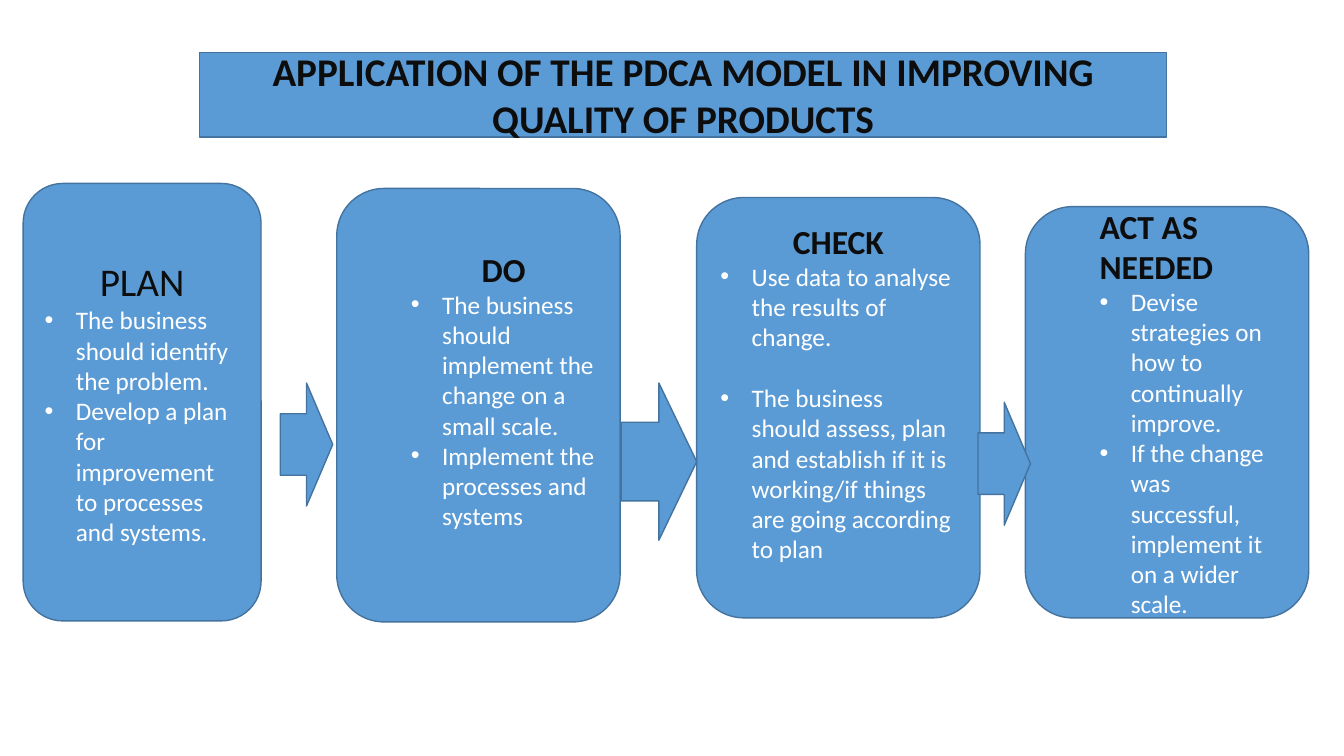
import pptx
import pptx.dml.color
import pptx.enum.shapes
import pptx.enum.text
import pptx.oxml.ns
import pptx.util
from lxml import etree

Inches = pptx.util.Inches
Pt = pptx.util.Pt
SHAPE = pptx.enum.shapes.MSO_SHAPE
ALIGN = pptx.enum.text.PP_ALIGN
LINE_18 = 22  # height in points of one line of 18 pt text


def color(hex_value):
    return pptx.dml.color.RGBColor.from_string(hex_value)


class CycleSlide:
    FONT = "Calibri"
    FILL = "5B9BD5"
    OUTLINE = "43739E"
    DARK = "0D0D0D"
    LIGHT = "FFFFFF"
    HANGING = 0.31

    def __init__(self, presentation):
        self.slide = presentation.slides.add_slide(presentation.slide_layouts[6])

    def block(self, kind, left, top, width, height):
        """Add a filled, outlined preset shape."""
        shape = self.slide.shapes.add_shape(
            kind, Inches(left), Inches(top), Inches(width), Inches(height))
        shape.shadow.inherit = False
        shape.fill.solid()
        shape.fill.fore_color.rgb = color(self.FILL)
        shape.line.color.rgb = color(self.OUTLINE)
        shape.line.width = Pt(1)
        shape.text_frame.word_wrap = True
        shape.text_frame.vertical_anchor = pptx.enum.text.MSO_ANCHOR.MIDDLE
        return shape

    def set_text(self, paragraph, text, size, hex_value, bold=False, align=ALIGN.LEFT):
        paragraph.text = text
        paragraph.alignment = align
        for run in paragraph.runs:
            run.font.name = self.FONT
            run.font.size = Pt(size)
            run.font.bold = bold
            run.font.color.rgb = color(hex_value)

    def indent(self, paragraph, margin, first_line=0):
        properties = paragraph._p.get_or_add_pPr()
        properties.set("marL", str(Inches(margin)))
        properties.set("indent", str(Inches(first_line)))
        return properties

    def bullet(self, paragraph, text, margin):
        properties = self.indent(paragraph, margin + self.HANGING, -self.HANGING)
        for tag, attribute, value in (("a:buFont", "typeface", "Arial"),
                                      ("a:buChar", "char", "•")):
            element = etree.SubElement(properties, pptx.oxml.ns.qn(tag))
            element.set(attribute, value)
        self.set_text(paragraph, text, 18, self.LIGHT)

    def title(self, text, *box):
        shape = self.block(SHAPE.RECTANGLE, *box)
        self.set_text(shape.text_frame.paragraphs[0], text, 28, self.DARK, True, ALIGN.CENTER)

    def stage(self, box, heading, bullets, size=24, bold=True, align=ALIGN.CENTER,
              margin=0, gap=0, lines_below=0):
        """Add a rounded card; gap is the space in points between its bullets."""
        frame = self.block(SHAPE.ROUNDED_RECTANGLE, *box).text_frame
        frame.margin_bottom = Inches(0.05) + Pt(LINE_18 * lines_below)
        self.indent(frame.paragraphs[0], margin)
        self.set_text(frame.paragraphs[0], heading, size, self.DARK, bold, align)
        for index, text in enumerate(bullets):
            paragraph = frame.add_paragraph()
            self.bullet(paragraph, text, margin)
            if index and gap:
                paragraph.space_before = Pt(gap)

    def arrow(self, *box):
        self.block(SHAPE.RIGHT_ARROW, *box)


def main():
    presentation = pptx.Presentation()
    presentation.slide_width = Inches(13.33)
    presentation.slide_height = Inches(7.5)
    cycle = CycleSlide(presentation)

    cycle.title("APPLICATION OF THE PDCA MODEL IN IMPROVING QUALITY OF PRODUCTS",
                1.98, 0.52, 9.59, 0.84)
    cycle.stage((0.23, 1.82, 2.36, 4.34), "PLAN",
                ["The business should identify the problem.",
                 "Develop a plan for improvement to processes and systems."],
                size=28, bold=False)
    cycle.stage((3.34, 1.87, 2.81, 4.3), "DO",
                ["The business should implement the change on a small scale.",
                 "Implement the processes and systems"],
                margin=0.5, lines_below=1)
    cycle.stage((6.91, 1.96, 2.81, 4.17), "CHECK",
                ["Use data to analyse the results of change.",
                 "The business should assess, plan and establish if it is "
                 "working/if things are going according to plan"],
                gap=LINE_18, lines_below=1)
    cycle.stage((10.17, 2.05, 2.81, 4.08), "ACT AS NEEDED",
                ["Devise strategies on how to continually improve.",
                 "If the change was successful, implement it on a wider scale."],
                align=ALIGN.LEFT, margin=0.5)

    cycle.arrow(2.78, 3.8, 0.52, 1.22)
    cycle.arrow(6.16, 3.8, 0.75, 1.56)
    cycle.arrow(9.7, 3.99, 0.52, 1.22)

    presentation.save("out.pptx")


if __name__ == "__main__":
    main()
